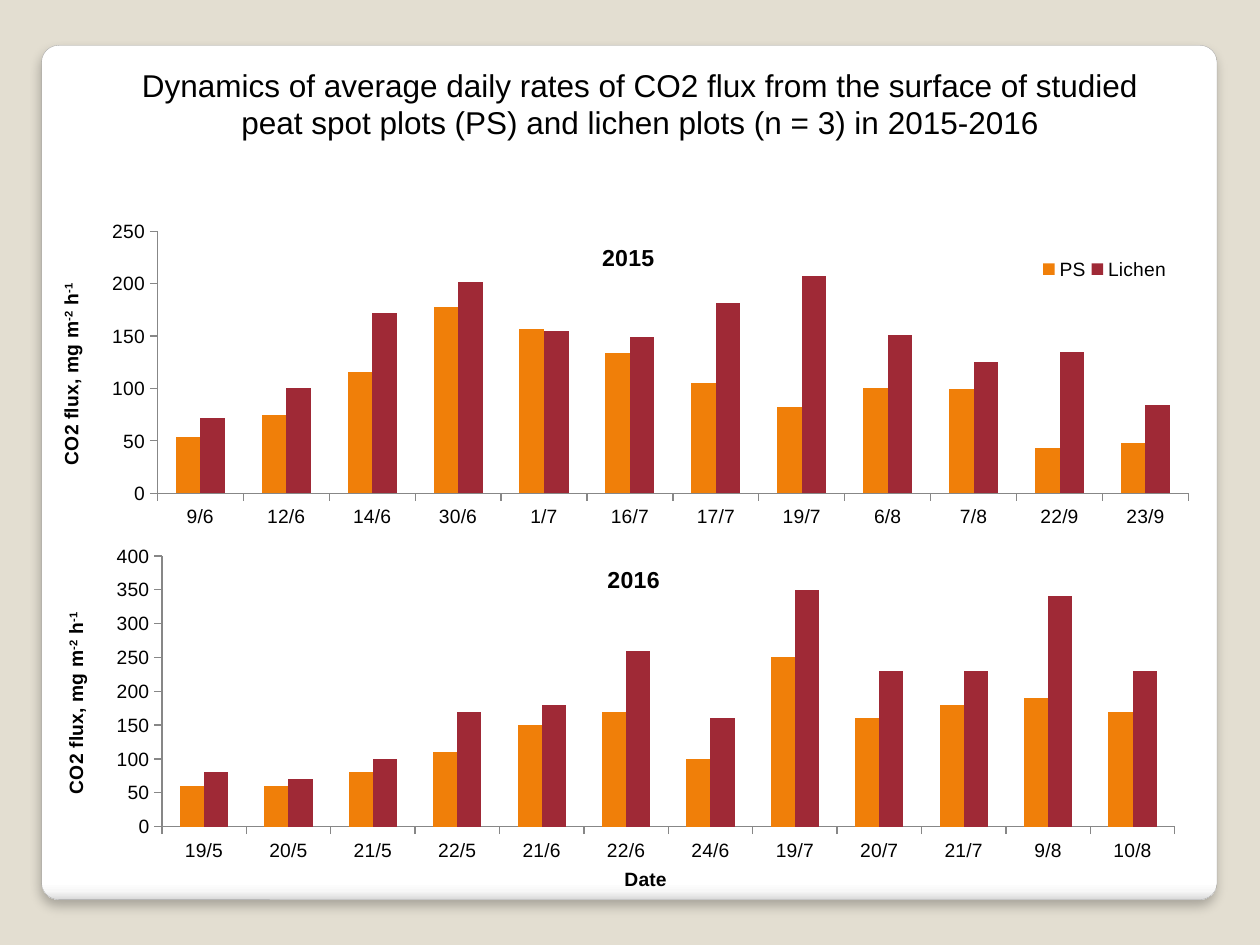
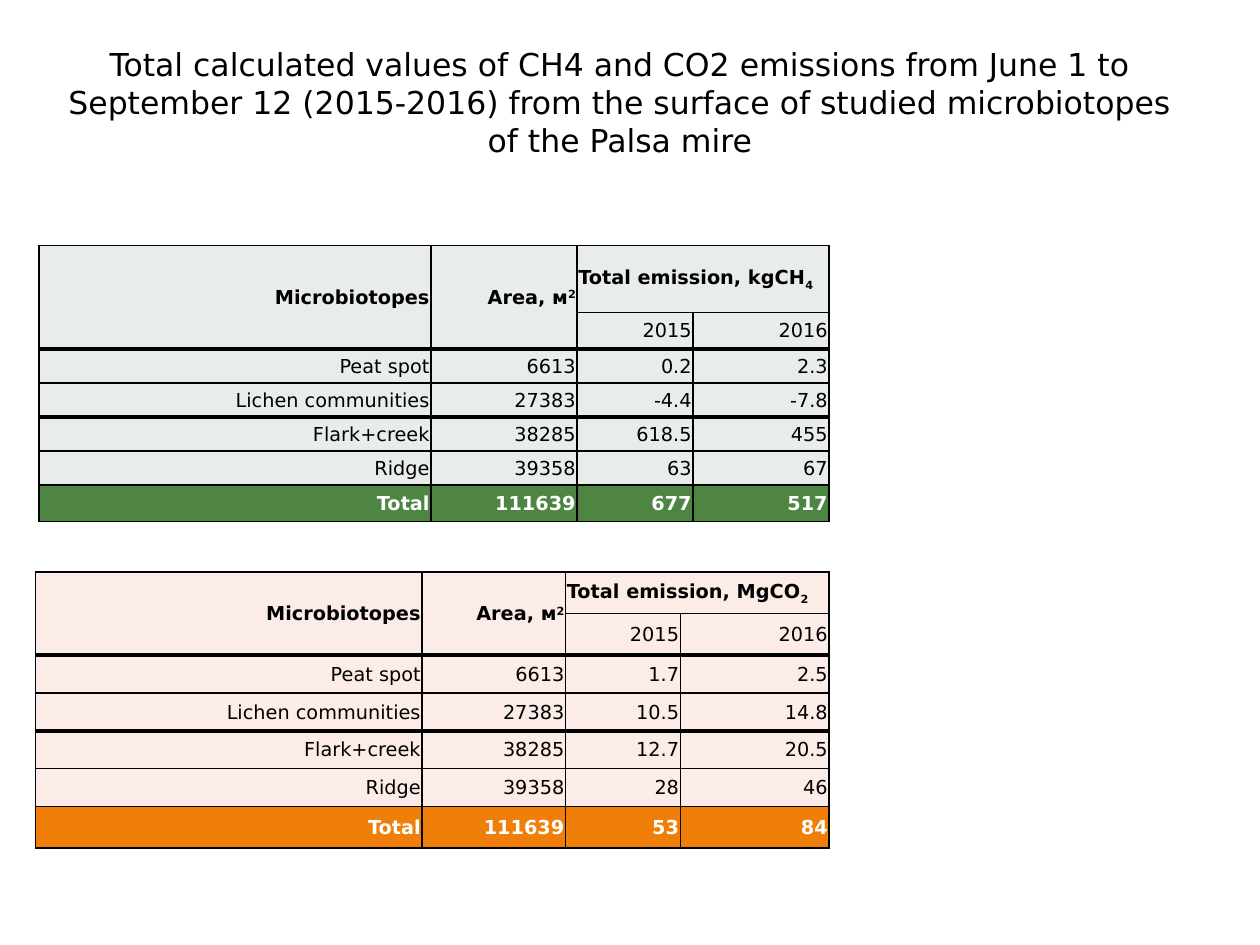
from pptx import Presentation
from pptx.chart.data import CategoryChartData
from pptx.dml.color import RGBColor
from pptx.enum.chart import XL_CHART_TYPE as ChartType, XL_LEGEND_POSITION as LegendPosition
from pptx.enum.chart import XL_TICK_MARK as TickMark
from pptx.enum.shapes import MSO_SHAPE as Shape
from pptx.enum.text import MSO_ANCHOR as Anchor, MSO_AUTO_SIZE as AutoSize, PP_ALIGN as Align
from pptx.oxml import parse_xml
from pptx.oxml.ns import nsdecls, qn
from pptx.util import Inches, Pt

COLUMNS, ROWS = 100, 75
UNIT = Inches(0.1)

BLACK, WHITE = "000000", "FFFFFF"
SAND, CARD_EDGE, AXIS_GREY = "E3DED1", "A4A4A4", "878787"
ORANGE, CRIMSON, GREEN = "F07F09", "9F2936", "4E8542"
PALE_GREEN, PALE_PINK = "E9EDE9", "FCECE7"
CHART_FONT, TABLE_FONT = "Arial", "DejaVu Sans"
TITLE_SIZE, YEAR_SIZE, BODY_SIZE = 18, 13.2, 11
THIN, THICK = 1, 2.25
RAISED, LOWERED = 30, -25

FLUX_LABEL = (("CO2 flux, mg m", 0), ("-2", RAISED), (" h", 0), ("-1", RAISED))
AREA_LABEL = (("Area, м", 0), ("2", RAISED))
SERIES_COLORS = {"PS": ORANGE, "Lichen": CRIMSON}

FLUX_CHARTS = (
    dict(
        year="2015", box=(3.1, 17.4, 93, 25.5), top_value=250, legend=(85.2, 11.5, 11.5, 8),
        plot=(10.1, 3.8, 88, 81.5), year_place=(47.7, 6),
        dates="9/6 12/6 14/6 30/6 1/7 16/7 17/7 19/7 6/8 7/8 22/9 23/9",
        values=((54, 75, 116, 178, 157, 134, 105, 82, 100, 99, 43, 48),
                (72, 100, 172, 202, 155, 149, 182, 207, 151, 125, 135, 84)),
    ),
    dict(
        year="2016", box=(3.9, 43, 92.2, 28.1), top_value=400, date_title="Date",
        plot=(9.7, 4, 87.2, 76.5), year_place=(47.7, 5.4),
        dates="19/5 20/5 21/5 22/5 21/6 22/6 24/6 19/7 20/7 21/7 9/8 10/8",
        values=((60, 60, 80, 110, 150, 170, 100, 250, 160, 180, 190, 170),
                (80, 70, 100, 170, 180, 260, 160, 350, 230, 230, 340, 230)),
    ),
)

PLOTS = (("Peat spot", "6613"), ("Lichen communities", "27383"), ("Flark+creek", "38285"),
         ("Ridge", "39358"), ("Total", "111639"))
EMISSION_TABLES = (
    dict(
        box=(3.1, 19.5, 62.6, 21.9), widths=(31.1, 11.6, 9.2, 10.8),
        heights=(5.3, 2.9, 2.7, 2.7, 2.7, 2.7, 2.9), pale=PALE_GREEN, strong=GREEN,
        gas=(("Total emission, kgСН", 0), ("4", LOWERED)),
        emissions=(("0.2", "2.3"), ("-4.4", "-7.8"), ("618.5", "455"), ("63", "67"),
                   ("677", "517")),
    ),
    dict(
        box=(2.8, 45.4, 63, 21.9), widths=(30.7, 11.4, 9.1, 11.8),
        heights=(3.3, 3.3, 3, 3, 3, 3, 3.3), pale=PALE_PINK, strong=ORANGE,
        gas=(("Total emission, MgСO", 0), ("2", LOWERED)),
        emissions=(("1.7", "2.5"), ("10.5", "14.8"), ("12.7", "20.5"), ("28", "46"),
                   ("53", "84")),
    ),
)


def color(hex_string):
    return RGBColor.from_string(hex_string)


def grid(*lengths):
    return [round(length * UNIT) for length in lengths]


def write(paragraph, text, font=CHART_FONT, size=BODY_SIZE, ink=BLACK, bold=False, align=None):
    """Fill a paragraph from a string or from (text, baseline percent) pieces."""
    if align is not None:
        paragraph.alignment = align
    for piece, baseline in ((text, 0),) if isinstance(text, str) else text:
        run = paragraph.add_run()
        run.text = piece
        run.font.name, run.font.size, run.font.bold = font, Pt(size), bold
        run.font.color.rgb = color(ink)
        if baseline:
            run.font._element.set("baseline", str(baseline * 1000))


def add_titled_slide(presentation, title, box, font, background):
    slide = presentation.slides.add_slide(presentation.slide_layouts[5])
    slide.background.fill.solid()
    slide.background.fill.fore_color.rgb = color(background)
    shape = slide.shapes.title
    shape.left, shape.top, shape.width, shape.height = grid(*box)
    frame = shape.text_frame
    frame.word_wrap, frame.auto_size, frame.vertical_anchor = True, AutoSize.NONE, Anchor.TOP
    write(frame.paragraphs[0], title, font=font, size=TITLE_SIZE, align=Align.CENTER)
    return slide


def add_card(slide, box):
    card = slide.shapes.add_shape(Shape.ROUNDED_RECTANGLE, *grid(*box))
    card.adjustments[0] = 0.02
    card.fill.gradient()
    card.fill.gradient_angle = 270
    stops = card._element.spPr.find(".//" + qn("a:gsLst"))
    stops.clear()
    for percent, shade in ((0, WHITE), (98, WHITE), (99, "F7F7F7"), (100, "DADADA")):
        stops.append(parse_xml(f'<a:gs {nsdecls("a")} pos="{percent * 1000}">'
                               f'<a:srgbClr val="{shade}"/></a:gs>'))
    card.line.color.rgb = color(CARD_EDGE)
    card.line.width = Pt(0.16)
    card._element.spPr.append(parse_xml(
        f'<a:effectLst {nsdecls("a")}><a:outerShdw blurRad="{Pt(6)}" dist="{Pt(4)}" '
        f'dir="5400000" rotWithShape="0"><a:srgbClr val="{BLACK}"><a:alpha val="25000"/>'
        '</a:srgbClr></a:outerShdw></a:effectLst>'))
    slide.shapes._spTree.insert(2, card._element)


def place_in_chart(element, percents, target=""):
    """Fix a chart part at left, top and optionally width, height, in percent of the chart."""
    for layout in element.findall(qn("c:layout")):
        element.remove(layout)
    names = "xywh"[:len(percents)]
    modes = "".join(f'<c:{name}Mode val="edge"/>' for name in "xy")
    sizes = "".join(f'<c:{name} val="{percent / 100:.4f}"/>'
                    for name, percent in zip(names, percents))
    layout = parse_xml(f'<c:layout {nsdecls("c")}><c:manualLayout>{target}{modes}{sizes}'
                       '</c:manualLayout></c:layout>')
    leading = (qn("c:tx"), qn("c:legendPos"))
    element.insert(sum(child.tag in leading for child in element), layout)


def style_axis(axis, title=None):
    axis.has_major_gridlines = False
    axis.major_tick_mark, axis.minor_tick_mark = TickMark.OUTSIDE, TickMark.NONE
    axis.format.line.color.rgb = color(AXIS_GREY)
    axis.format.line.width = Pt(0.75)
    axis.has_title = title is not None
    if title:
        write(axis.axis_title.text_frame.paragraphs[0], title, bold=True)


def add_flux_chart(slide, year, box, top_value, plot, year_place, dates, values,
                   legend=None, date_title=None):
    data = CategoryChartData()
    data.categories = dates.split()
    for name, series_values in zip(SERIES_COLORS, values):
        data.add_series(name, series_values)
    chart = slide.shapes.add_chart(ChartType.COLUMN_CLUSTERED, *grid(*box), data).chart
    chart.font.name, chart.font.size = CHART_FONT, Pt(BODY_SIZE)
    chart.font.color.rgb = color(BLACK)
    chart._chartSpace.find(qn("c:txPr")).addprevious(parse_xml(
        f'<c:spPr {nsdecls("c", "a")}><a:noFill/><a:ln><a:noFill/></a:ln></c:spPr>'))

    columns = chart.plots[0]
    columns.gap_width, columns.overlap, columns.vary_by_categories = 150, 0, False
    for series, fill in zip(columns.series, SERIES_COLORS.values()):
        series.format.fill.solid()
        series.format.fill.fore_color.rgb = color(fill)
    place_in_chart(chart._chartSpace.chart.plotArea, plot, '<c:layoutTarget val="inner"/>')

    style_axis(chart.category_axis, date_title)
    flux_axis = chart.value_axis
    style_axis(flux_axis, FLUX_LABEL)
    flux_axis.minimum_scale, flux_axis.maximum_scale, flux_axis.major_unit = 0, top_value, 50
    direction = flux_axis.axis_title.text_frame._bodyPr
    direction.set("rot", "-5400000")
    direction.set("vert", "horz")

    chart.has_title = True
    heading = chart.chart_title
    write(heading.text_frame.paragraphs[0], year, size=YEAR_SIZE, bold=True)
    place_in_chart(heading._element, year_place)
    heading._element.find(qn("c:overlay")).set("val", "1")

    chart.has_legend = legend is not None
    if legend:
        chart.legend.position = LegendPosition.RIGHT
        chart.legend.include_in_layout = False
        place_in_chart(chart.legend._element, legend)


def set_borders(cell, **widths):
    properties = cell._tc.get_or_add_tcPr()
    for side in "LRTB":
        width = Pt(widths.get(side, THIN))
        properties.append(parse_xml(
            f'<a:ln{side} {nsdecls("a")} w="{width}"><a:solidFill><a:srgbClr val="{BLACK}"/>'
            f'</a:solidFill></a:ln{side}>'))


def add_emission_table(slide, box, widths, heights, pale, strong, gas, emissions):
    contents = [("Microbiotopes", AREA_LABEL, gas, ""), ("", "", "2015", "2016")]
    contents += [plot + pair for plot, pair in zip(PLOTS, emissions)]
    last = len(contents) - 1
    thick_below = (1, 3)
    table = slide.shapes.add_table(len(heights), len(widths), *grid(*box)).table
    table.first_row = table.horz_banding = False
    for column, width in zip(table.columns, grid(*widths)):
        column.width = width
    for row, height in zip(table.rows, grid(*heights)):
        row.height = height

    for row, texts in enumerate(contents):
        for column, text in enumerate(texts):
            cell = table.cell(row, column)
            spans_header = row == 0 and column < 2
            set_borders(cell, T=THICK if row - 1 in thick_below else THIN,
                        B=THICK if row in thick_below or spans_header else THIN)
            cell.fill.solid()
            cell.fill.fore_color.rgb = color(strong if row == last else pale)
            cell.vertical_anchor = Anchor.MIDDLE
            cell.margin_left = cell.margin_right = cell.margin_top = Inches(0.01)
            cell.margin_bottom = 0
            if text:
                write(cell.text_frame.paragraphs[0], text, font=TABLE_FONT,
                      ink=WHITE if row == last else BLACK, bold=row in (0, last),
                      align=Align.LEFT if text == gas else Align.RIGHT)
    for column in range(2):
        table.cell(0, column).merge(table.cell(1, column))
    table.cell(0, 2).merge(table.cell(0, 3))


def build_flux_slide(presentation):
    slide = add_titled_slide(
        presentation,
        "Dynamics of average daily rates of CO2 flux from the surface of studied peat spot "
        "plots (PS) and lichen plots (n = 3) in 2015-2016",
        box=(9.4, 4.7, 82.8, 7.1), font=CHART_FONT, background=SAND)
    add_card(slide, (3.3, 3.6, 93.3, 67.8))
    for chart in FLUX_CHARTS:
        add_flux_chart(slide, **chart)


def build_emission_slide(presentation):
    slide = add_titled_slide(
        presentation,
        "Total calculated values of CH4 and CO2 emissions from June 1 to September 12 "
        "(2015-2016) from the surface of studied microbiotopes of the Palsa mire",
        box=(3.9, 3.1, 90.6, 13.1), font=TABLE_FONT, background=WHITE)
    for table in EMISSION_TABLES:
        add_emission_table(slide, **table)


def main():
    presentation = Presentation()
    presentation.slide_width, presentation.slide_height = grid(COLUMNS, ROWS)
    build_flux_slide(presentation)
    build_emission_slide(presentation)
    presentation.save("out.pptx")


if __name__ == "__main__":
    main()
